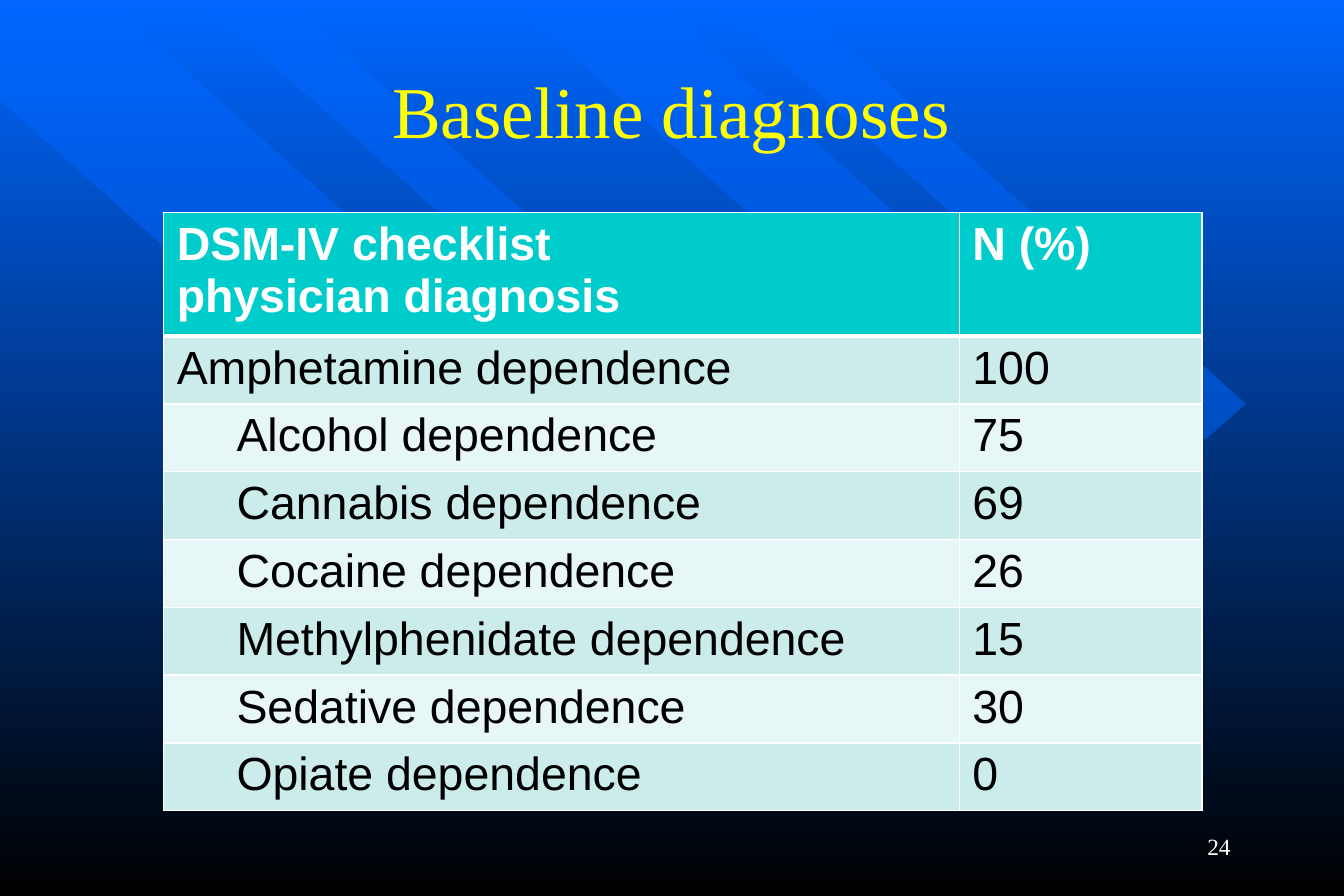
from pptx import Presentation, util as u
from pptx.dml.color import RGBColor
from pptx.enum import text
from pptx.oxml import parse_xml
from pptx.oxml.ns import nsdecls, qn

COLOURS = {
    "blue": "0066FF", "black": "000000", "white": "FFFFFF", "yellow": "FFFF00",
    "header": "00CCCC", "dark_band": "CCECEC", "light_band": "E7F6F6",
}
STRIPES = [
    [(7.54, 5.93), (0.89, 0), (0, 0), (0, 0.84), (6.63, 6.75)],
    [(2.4, 0), (8.31, 5.27), (7.95, 5.59), (1.68, 0)],
    [(5.5, 0), (9.85, 3.89), (9.24, 4.44), (4.27, 0)],
    [(5.97, 0), (10.09, 3.68), (10.43, 3.38), (6.65, 0)],
]
DIAGNOSES = [
    ("DSM-IV checklist\nphysician diagnosis", "N (%)"),
    ("Amphetamine dependence", "100"),
    ("Alcohol dependence", "75"),
    ("Cannabis dependence", "69"),
    ("Cocaine dependence", "26"),
    ("Methylphenidate dependence", "15"),
    ("Sedative dependence", "30"),
    ("Opiate dependence", "0"),
]
FIRST_INDENTED_ROW = 2


def colour(name):
    return RGBColor.from_string(COLOURS[name])


class SlideBuilder:
    serif = "Times New Roman"
    sans = "Arial"

    def __init__(self, slide):
        self.slide = slide

    def background(self, top, bottom):
        fill = self.slide.background.fill
        fill.gradient()
        fill.gradient_angle = 270
        for stop, name in zip(fill.gradient_stops, (top, bottom)):
            stop.color.rgb = colour(name)

    def stripe(self, points):
        """Draw a half-transparent diagonal band."""
        corners = [(u.Inches(x), u.Inches(y)) for x, y in points]
        builder = self.slide.shapes.build_freeform(*corners[0])
        builder.add_line_segments(corners[1:], close=True)
        shape = builder.convert_to_shape()
        shape.shadow.inherit = False
        shape.line.fill.background()
        shape.fill.solid()
        shape.fill.fore_color.rgb = colour("blue")
        fill_colour = shape._element.spPr.find(qn("a:solidFill"))[0]
        fill_colour.append(parse_xml(f'<a:alpha {nsdecls("a")} val="50000"/>'))

    def format_runs(self, frame, font, size, name, bold=False):
        for paragraph in frame.paragraphs:
            for run in paragraph.runs:
                run.font.name = font
                run.font.size = u.Pt(size)
                run.font.bold = bold
                run.font.color.rgb = colour(name)

    def label(self, content, box, size, name, align, wrap=True):
        shape = self.slide.shapes.add_textbox(*map(u.Inches, box))
        frame = shape.text_frame
        frame.text = content
        frame.word_wrap = wrap
        frame.vertical_anchor = text.MSO_ANCHOR.MIDDLE
        frame.paragraphs[0].alignment = align
        self.format_runs(frame, self.serif, size, name)

    def borders(self, cell, top, bottom):
        """Give a cell white edges; top and bottom are widths in points."""
        properties = cell._tc.get_or_add_tcPr()
        widths = {"lnL": 1, "lnR": 1, "lnT": top, "lnB": bottom}
        for index, (edge, width) in enumerate(widths.items()):
            properties.insert(index, parse_xml(
                f'<a:{edge} {nsdecls("a")} w="{u.Pt(width)}"><a:solidFill>'
                f'<a:srgbClr val="{COLOURS["white"]}"/></a:solidFill></a:{edge}>'))

    def table(self, rows, left, top, column_widths, header_height, row_height):
        height = header_height + row_height * (len(rows) - 1)
        frame = self.slide.shapes.add_table(
            len(rows), len(column_widths), u.Inches(left), u.Inches(top),
            u.Inches(sum(column_widths)), u.Inches(height))
        table = frame.table
        for column, width in zip(table.columns, column_widths):
            column.width = u.Inches(width)
        for r, values in enumerate(rows):
            header = r == 0
            table.rows[r].height = u.Inches(header_height if header else row_height)
            band = "header" if header else "dark_band" if r % 2 else "light_band"
            for c, value in enumerate(values):
                cell = table.cell(r, c)
                cell.text_frame.text = value
                cell.margin_left = cell.margin_right = u.Inches(0.11)
                cell.fill.solid()
                cell.fill.fore_color.rgb = colour(band)
                self.borders(cell, 3 if r == 1 else 1, 3 if header else 1)
                self.format_runs(cell.text_frame, self.sans, 28,
                                 "white" if header else "black", header)
                if c == 0 and r >= FIRST_INDENTED_ROW:
                    paragraph = cell.text_frame.paragraphs[0]
                    paragraph.level = 1
                    indent = paragraph._p.get_or_add_pPr()
                    indent.set("marL", str(u.Inches(0.5)))
                    indent.set("indent", "0")


def main():
    presentation = Presentation()
    presentation.slide_width = u.Inches(11.25)
    presentation.slide_height = u.Inches(7.5)
    builder = SlideBuilder(
        presentation.slides.add_slide(presentation.slide_layouts[6]))
    builder.background("blue", "black")
    for points in STRIPES:
        builder.stripe(points)
    builder.label("Baseline diagnoses", (0.84, 0.25, 9.56, 1.33), 44, "yellow",
                  text.PP_ALIGN.CENTER)
    builder.table(DIAGNOSES, 1.37, 1.78, (6.66, 2.03), 0.96, 0.53)
    builder.label("24", (8.06, 6.83, 2.34, 0.5), 14, "white",
                  text.PP_ALIGN.RIGHT, wrap=False)
    presentation.save("out.pptx")


if __name__ == "__main__":
    main()
